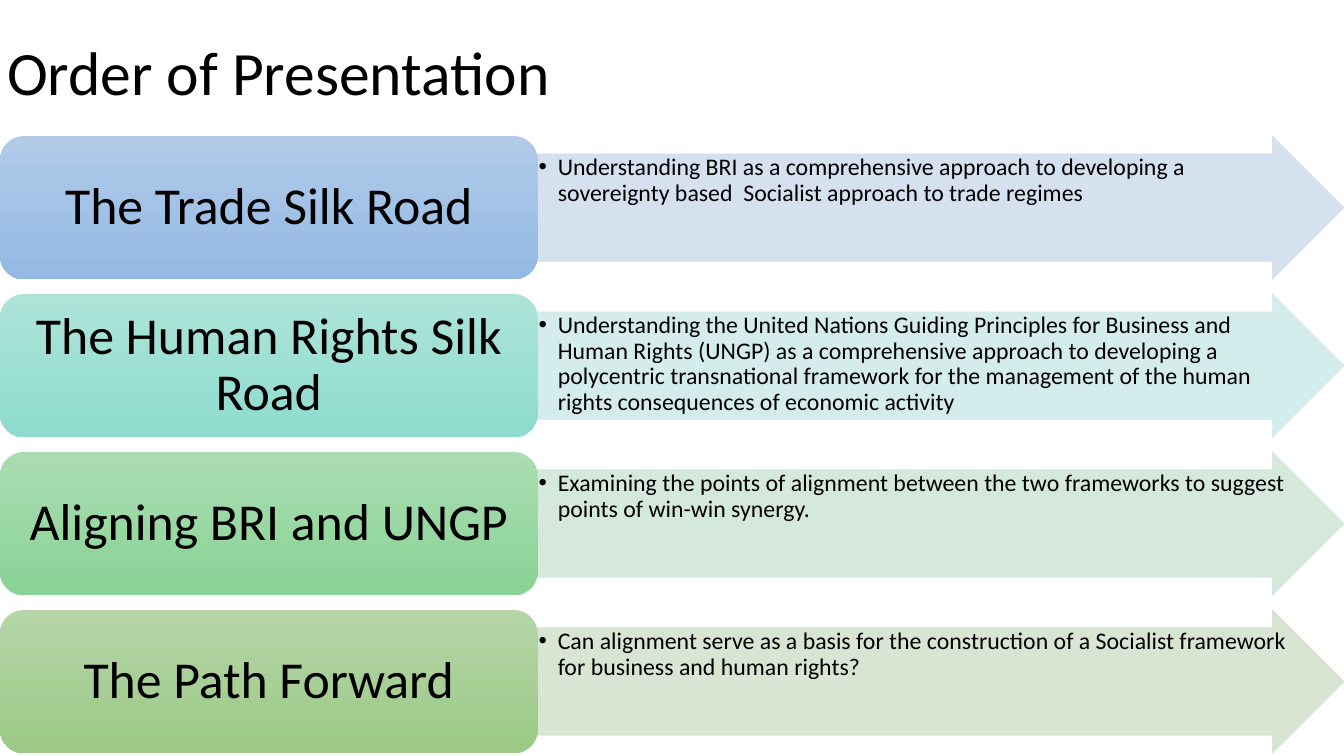
from dataclasses import dataclass

from lxml import etree
from pptx import Presentation
from pptx.dml.color import RGBColor
from pptx.enum.shapes import MSO_SHAPE
from pptx.enum.text import MSO_ANCHOR, MSO_AUTO_SIZE, PP_ALIGN
from pptx.oxml.ns import qn
from pptx.util import Inches, Pt

ARROW = MSO_SHAPE.RIGHT_ARROW
ROUNDED = MSO_SHAPE.ROUNDED_RECTANGLE
TOP, MIDDLE = MSO_ANCHOR.TOP, MSO_ANCHOR.MIDDLE
LEFT, CENTER = PP_ALIGN.LEFT, PP_ALIGN.CENTER
NO_AUTOFIT = MSO_AUTO_SIZE.NONE
COMPARISON_LAYOUT = 4


@dataclass(frozen=True)
class Theme:
    font: str = "Calibri"
    text: str = "000000"
    title_size: float = 44
    label_size: float = 37
    detail_size: float = 17
    line_spacing: float = 0.9
    arrow_opacity: int = 90


@dataclass(frozen=True)
class Grid:
    """Row and column measures, in inches."""
    width: float = 13.33
    height: float = 7.5
    top: float = 1.35
    pitch: float = 1.567
    row_height: float = 1.42
    label_share: float = 0.4

    @property
    def split(self) -> float:
        return self.width * self.label_share

    def row_top(self, row: int) -> float:
        return self.top + row * self.pitch


@dataclass(frozen=True)
class Topic:
    label: str
    detail: str
    arrow: str
    gradient: tuple[str, str]


THEME = Theme()
GRID = Grid()
TOPICS = [
    Topic("The Trade Silk Road",
          "Understanding BRI as a comprehensive approach to developing a "
          "sovereignty based  Socialist approach to trade regimes",
          "D2DEEF", ("B1CBE9", "93B9E4")),
    Topic("The Human Rights Silk Road",
          "Understanding the United Nations Guiding Principles for Business and "
          "Human Rights (UNGP) as a comprehensive approach to developing a "
          "polycentric transnational framework for the management of the human "
          "rights consequences of economic activity",
          "D0ECEA", ("ADE3D9", "8EDCCE")),
    Topic("Aligning BRI and UNGP",
          "Examining the points of alignment between the two frameworks to "
          "suggest points of win-win synergy.",
          "D0E7D8", ("AADCB2", "8AD396")),
    Topic("The Path Forward",
          "Can alignment serve as a basis for the construction of a Socialist "
          "framework for business and human rights?",
          "D5E3CF", ("B5D5A7", "9CC987")),
]


def set_all(target, values: dict) -> None:
    for name, value in values.items():
        setattr(target, name, value)


def place(shape, left: float, top: float, width: float, height: float) -> None:
    set_all(shape, {"left": Inches(left), "top": Inches(top),
                    "width": Inches(width), "height": Inches(height)})


def write(shape, text: str, size: float, align, anchor,
          margins: tuple[float, float], bullet: bool = False) -> None:
    """Fill a shape with one paragraph; margins are horizontal and vertical."""
    side, end = (Inches(margin) for margin in margins)
    frame = shape.text_frame
    frame.text = text
    set_all(frame, {"word_wrap": True, "auto_size": NO_AUTOFIT,
                    "vertical_anchor": anchor,
                    "margin_left": side, "margin_right": side,
                    "margin_top": end, "margin_bottom": end})
    para = frame.paragraphs[0]
    set_all(para, {"alignment": align, "line_spacing": THEME.line_spacing,
                   "space_before": Pt(0), "space_after": Pt(0)})
    if bullet:
        add_bullet(para)
    font = para.runs[0].font
    set_all(font, {"name": THEME.font, "size": Pt(size), "bold": False})
    font.color.rgb = RGBColor.from_string(THEME.text)


def add_bullet(para) -> None:
    para.level = 1
    indent = Inches(0.19)
    properties = para._p.get_or_add_pPr()
    properties.set("marL", str(indent))
    properties.set("indent", str(-indent))
    etree.SubElement(properties, qn("a:buFont"), typeface="Arial")
    etree.SubElement(properties, qn("a:buChar"), char="•")


def draw_arrow(page, topic: Topic, top: float):
    arrow = page.shapes.add_shape(ARROW, 0, 0, 0, 0)
    place(arrow, GRID.split, top, GRID.width - GRID.split, GRID.row_height)
    arrow.shadow.inherit = False
    arrow.adjustments[0], arrow.adjustments[1] = 0.75, 0.5
    color = RGBColor.from_string(topic.arrow)
    for fill in (arrow.fill, arrow.line.fill):
        fill.solid()
        fill.fore_color.rgb = color
    arrow.line.width = Pt(0.5)
    for tint in arrow.element.iter(qn("a:srgbClr")):
        etree.SubElement(tint, qn("a:alpha"), val=str(THEME.arrow_opacity * 1000))
    return arrow


def draw_label(page, topic: Topic, top: float) -> None:
    label = page.shapes.add_shape(ROUNDED, 0, 0, 0, 0)
    place(label, 0, top, GRID.split, GRID.row_height)
    label.shadow.inherit = False
    label.line.fill.background()
    label.fill.gradient()
    label.fill.gradient_angle = 270
    for stop, color in zip(label.fill.gradient_stops, topic.gradient):
        stop.color.rgb = RGBColor.from_string(color)
    write(label, topic.label, THEME.label_size, CENTER, MIDDLE, (0.15, 0.08))


def draw_topic(page, body, topic: Topic, row: int) -> None:
    top = GRID.row_top(row)
    arrow = draw_arrow(page, topic, top)
    body.element.addprevious(arrow.element)  # keeps the text in front
    shaft_inset = GRID.row_height / 8
    place(body, GRID.split, top + shaft_inset, 7.47,
          GRID.row_height - 2 * shaft_inset)
    write(body, topic.detail, THEME.detail_size, LEFT, TOP, (0.01, 0.01), bullet=True)
    draw_label(page, topic, top)


def main() -> None:
    deck = Presentation()
    set_all(deck, {"slide_width": Inches(GRID.width),
                   "slide_height": Inches(GRID.height)})
    page = deck.slides.add_slide(deck.slide_layouts[COMPARISON_LAYOUT])
    title, *bodies = page.placeholders
    place(title, -0.03, 0.02, 6.48, 1.45)
    write(title, "Order of Presentation", THEME.title_size, LEFT, MIDDLE, (0.1, 0.05))
    for row, (body, topic) in enumerate(zip(bodies, TOPICS)):
        draw_topic(page, body, topic, row)
    deck.save("out.pptx")


if __name__ == "__main__":
    main()
